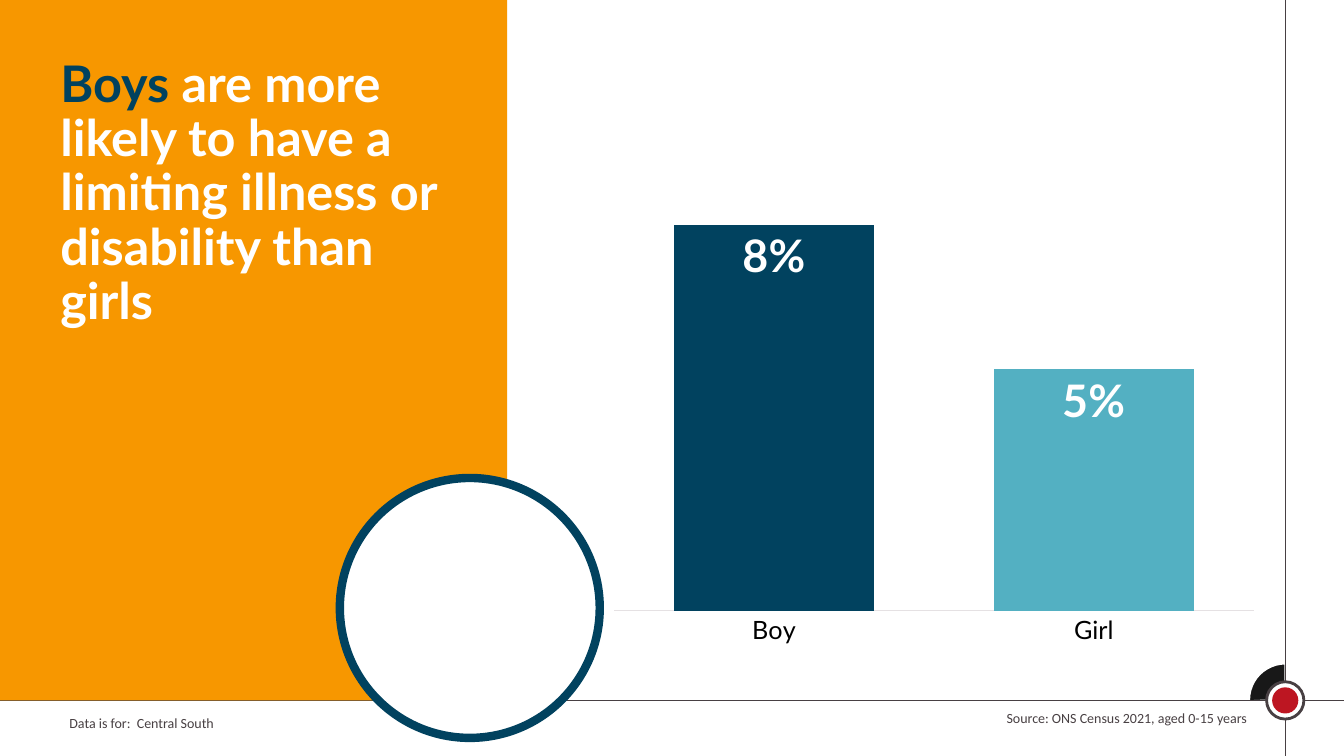
"""Build a slide comparing limiting illness or disability among boys and girls."""
from dataclasses import dataclass
from typing import Optional

from lxml import etree
from pptx import Presentation
from pptx.chart import data as chart_data
from pptx.dml.color import RGBColor
from pptx.enum import chart as charts, shapes, text
from pptx.oxml import ns
from pptx.util import Cm, Pt

NAVY = RGBColor(0x01, 0x42, 0x5F)
TEAL = RGBColor(0x53, 0xB0, 0xC2)
ORANGE = RGBColor(0xF7, 0x97, 0x00)
RED = RGBColor(0xBD, 0x16, 0x22)
GREY = RGBColor(0x48, 0x40, 0x43)
PALE_GREY = RGBColor(0xE5, 0xE1, 0xE3)
CHARCOAL = RGBColor(0x18, 0x18, 0x18)
BLACK = RGBColor(0, 0, 0)
WHITE = RGBColor(255, 255, 255)

WIDTH, HEIGHT = 33.87, 19.05
RULE_X, RULE_Y = 32.39, 17.65
AXIS_MAXIMUM = 8.6 / 100


@dataclass
class Figure:
    kind: shapes.MSO_SHAPE
    left: float
    top: float
    width: float
    height: float
    fill: RGBColor
    line: Optional[RGBColor] = None
    weight: float = 0
    angles: tuple[float, ...] = ()


@dataclass
class Rule:
    start: tuple[float, float]
    end: tuple[float, float]


@dataclass
class Label:
    left: float
    top: float
    width: float
    height: float
    spans: list[tuple[str, RGBColor]]
    font: str = "Calibri"
    size: int = 10
    bold: bool = False
    align: text.PP_ALIGN = text.PP_ALIGN.LEFT
    spacing: float = 1.0


def disc(x: float, y: float, size: float, fill: RGBColor,
         line: Optional[RGBColor] = None, weight: float = 0) -> Figure:
    return Figure(shapes.MSO_SHAPE.OVAL, x - size / 2, y - size / 2, size, size,
                  fill, line, weight)


QUARTER = Figure(shapes.MSO_SHAPE.PIE, RULE_X - 0.91, RULE_Y - 0.93, 1.83, 1.83,
                 CHARCOAL, WHITE, 1.5, (106.62, 162))
RULES = [Rule((RULE_X, 0), (RULE_X, HEIGHT)), Rule((0, RULE_Y), (WIDTH, RULE_Y))]
FIGURES = [
    disc(RULE_X, RULE_Y, 0.94, WHITE, GREY, 2),
    disc(RULE_X, RULE_Y, 0.66, RED),
    Figure(shapes.MSO_SHAPE.RECTANGLE, 0, 0, 12.78, RULE_Y, ORANGE),
    disc(11.84, 15.32, 6.55, WHITE, NAVY, 6),
]
LABELS = [
    Label(1.5, 17.88, 11.15, 0.69, [("Data is for:  Central South", GREY)]),
    Label(24.18, 17.75, 7.49, 0.69, [("Source: ONS Census 2021, aged 0-15 years", GREY)],
          align=text.PP_ALIGN.RIGHT),
    Label(1.27, 1.35, 10.72, 8.41,
          [("Boys", NAVY),
           (" are more likely to have a limiting illness or disability than girls", WHITE)],
          "Lato", 36, True, spacing=0.9),
]


def draw_figure(page, figure: Figure) -> None:
    shape = page.shapes.add_shape(figure.kind, Cm(figure.left), Cm(figure.top),
                                  Cm(figure.width), Cm(figure.height))
    shape.shadow.inherit = False
    for index, angle in enumerate(figure.angles):
        shape.adjustments[index] = angle
    shape.fill.solid()
    shape.fill.fore_color.rgb = figure.fill
    if figure.line is None:
        shape.line.fill.background()
    else:
        shape.line.color.rgb = figure.line
        shape.line.width = Pt(figure.weight)


def draw_rule(page, rule: Rule) -> None:
    connector = page.shapes.add_connector(
        shapes.MSO_CONNECTOR.STRAIGHT, *map(Cm, rule.start + rule.end))
    connector.line.color.rgb = GREY
    connector.line.width = Pt(1)
    etree.SubElement(connector._element.spPr, ns.qn("a:effectLst"))


def draw_label(page, label: Label) -> None:
    box = page.shapes.add_textbox(Cm(label.left), Cm(label.top),
                                  Cm(label.width), Cm(label.height))
    box.text_frame.word_wrap = True
    para = box.text_frame.paragraphs[0]
    para.alignment = label.align
    para.line_spacing = label.spacing
    para.font.name = label.font
    para.font.size = Pt(label.size)
    para.font.bold = label.bold
    for words, color in label.spans:
        span = para.add_run()
        span.text = words
        span.font.color.rgb = color


def style_font(font, name: str, size: int, color: RGBColor, bold: bool = False) -> None:
    font.name = name
    font.size = Pt(size)
    font.color.rgb = color
    font.bold = bold


def draw_chart(page) -> None:
    values = chart_data.CategoryChartData(number_format="0%")
    values.categories = ["Boy", "Girl"]
    values.add_series("Series 1", [0.08, 0.05])
    chart = page.shapes.add_chart(charts.XL_CHART_TYPE.COLUMN_CLUSTERED, Cm(15.14),
                                  Cm(4.7), Cm(16.79), Cm(11.79), values).chart
    chart.has_legend = False
    chart.has_title = False
    style_font(chart.font, "Calibri", 16, GREY)

    category_axis = chart.category_axis
    category_axis.major_tick_mark = charts.XL_TICK_MARK.NONE
    category_axis.format.line.color.rgb = PALE_GREY
    category_axis.format.line.width = Pt(0.75)
    style_font(category_axis.tick_labels.font, "Lato", 18, BLACK)

    value_axis = chart.value_axis
    value_axis.minimum_scale = 0
    value_axis.maximum_scale = AXIS_MAXIMUM
    value_axis.has_major_gridlines = False
    value_axis.visible = False

    plot = chart.plots[0]
    plot.gap_width = 60
    plot.vary_by_categories = False
    series = plot.series[0]
    for index, color in enumerate((NAVY, TEAL)):
        fill = series.points[index].format.fill
        fill.solid()
        fill.fore_color.rgb = color

    labels = series.data_labels
    labels.show_value = True
    labels.number_format = "0%"
    labels.number_format_is_linked = False
    labels.position = charts.XL_LABEL_POSITION.INSIDE_END
    style_font(labels.font, "Lato", 32, WHITE, True)


def main() -> None:
    deck = Presentation()
    deck.slide_width, deck.slide_height = Cm(WIDTH), Cm(HEIGHT)
    page = deck.slides.add_slide(deck.slide_layouts[6])
    draw_figure(page, QUARTER)
    for rule in RULES:
        draw_rule(page, rule)
    for figure in FIGURES:
        draw_figure(page, figure)
    for label in LABELS:
        draw_label(page, label)
    draw_chart(page)
    deck.save("out.pptx")


if __name__ == "__main__":
    main()
